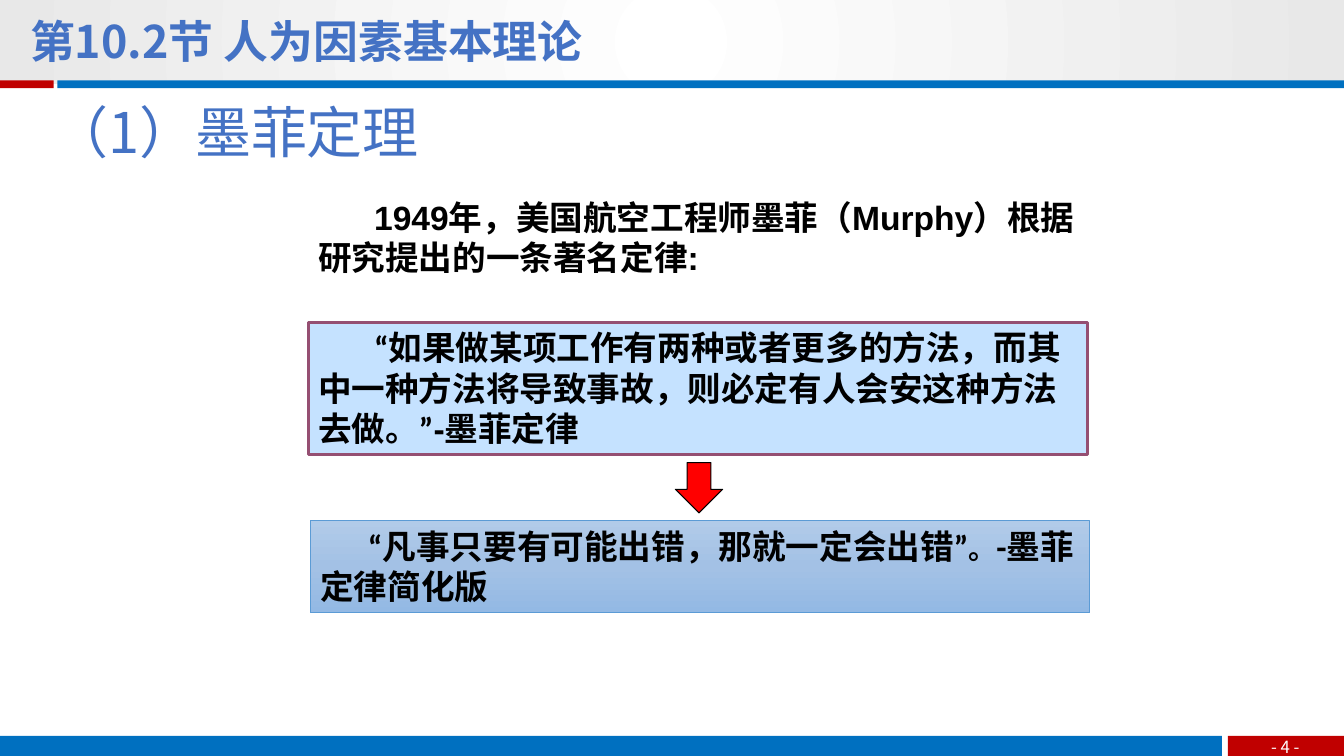
from dataclasses import dataclass

from lxml import etree
from pptx import Presentation
from pptx.dml.color import RGBColor
from pptx.enum.shapes import MSO_SHAPE
from pptx.enum.text import MSO_ANCHOR, PP_ALIGN
from pptx.oxml.ns import qn
from pptx.util import Pt

RECT, DOWN_ARROW = MSO_SHAPE.RECTANGLE, MSO_SHAPE.DOWN_ARROW
TOP, MIDDLE = MSO_ANCHOR.TOP, MSO_ANCHOR.MIDDLE
LEFT, CENTER = PP_ALIGN.LEFT, PP_ALIGN.CENTER
NOTO, BODY_EAST_ASIAN = "Noto Sans CJK SC", "Calibri"
BLUE, RED, TITLE_BLUE = "0070C0", "C00000", "4472C4"
BLACK, WHITE = "000000", "FFFFFF"

Box = tuple[float, float, float, float]
Stops = tuple[tuple[int, str], ...]


@dataclass(frozen=True)
class Panel:
    box: Box
    fill: str | Stops
    line: str = ""
    line_width: float = 0
    opacity: int = 100
    radial: bool = False
    kind: MSO_SHAPE = RECT


@dataclass(frozen=True)
class Text:
    box: Box
    runs: tuple[tuple[str, float], ...]
    font: str = NOTO
    east_asian: str = NOTO
    color: str = BLACK
    bold: bool = False
    align: PP_ALIGN = LEFT
    anchor: MSO_ANCHOR = TOP
    indent: float = 0
    line_spacing: float = 1
    margin_top: float = 3.6
    wrap: bool = True


def rgb(value: str) -> RGBColor:
    return RGBColor.from_string(value)


def add_gradient(shape, stops: Stops, radial: bool) -> None:
    """Fill from the centre outwards, or from top to bottom."""
    gradient = etree.Element(qn("a:gradFill"), rotWithShape="1")
    stop_list = etree.SubElement(gradient, qn("a:gsLst"))
    for percent, color in stops:
        stop = etree.SubElement(stop_list, qn("a:gs"), pos=str(percent * 1000))
        etree.SubElement(stop, qn("a:srgbClr"), val=color)
    if radial:
        circle = etree.SubElement(gradient, qn("a:path"), path="circle")
        center = dict.fromkeys("ltrb", "50000")
        etree.SubElement(circle, qn("a:fillToRect"), center)
    else:
        etree.SubElement(gradient, qn("a:lin"), ang="5400000", scaled="0")
    shape.element.spPr.find(qn("a:prstGeom")).addnext(gradient)


def add_panel(slide, panel: Panel) -> None:
    shape = slide.shapes.add_shape(panel.kind, *map(Pt, panel.box))
    shape.shadow.inherit = False
    if isinstance(panel.fill, str):
        shape.fill.solid()
        shape.fill.fore_color.rgb = rgb(panel.fill)
        if panel.opacity < 100:
            color = shape.element.spPr.find(qn("a:solidFill"))[0]
            etree.SubElement(color, qn("a:alpha"), val=str(panel.opacity * 1000))
    else:
        add_gradient(shape, panel.fill, panel.radial)
    if panel.line:
        shape.line.color.rgb = rgb(panel.line)
        shape.line.width = Pt(panel.line_width)
    else:
        shape.line.fill.background()


def add_text(slide, text: Text) -> None:
    frame = slide.shapes.add_textbox(*map(Pt, text.box)).text_frame
    frame.word_wrap = text.wrap
    frame.vertical_anchor = text.anchor
    frame.margin_top, frame.margin_bottom = Pt(text.margin_top), Pt(0)
    paragraph = frame.paragraphs[0]
    paragraph.alignment = text.align
    paragraph.line_spacing = text.line_spacing
    if text.indent:
        paragraph._p.get_or_add_pPr().set("indent", str(Pt(text.indent)))
    for words, size in text.runs:
        run = paragraph.add_run()
        run.text = words
        run.font.size = Pt(size)
        run.font.bold = text.bold
        run.font.name = text.font
        run.font.color.rgb = rgb(text.color)
        latin = run._r.rPr.find(qn("a:latin"))
        latin.addnext(etree.Element(qn("a:ea"), typeface=text.east_asian))


def statement(box: Box, indent: float, *runs: tuple[str, float],
              font: str = "Arial") -> Text:
    return Text(box, runs, font, BODY_EAST_ASIAN, bold=True, indent=indent)


# Header band, rules and footer
FRAME = (
    Panel((-1.4, 0, 961.4, 60), ((0, WHITE), (100, "E8E8E8")), radial=True),
    Panel((41, 57.4, 919, 5.6), BLUE),
    Panel((0, 57.4, 38.3, 5.6), RED),
    Panel((0, 525.6, 872.8, 14.4), BLUE),
    Panel((877, 525.6, 83, 14.4), RED),
)

# Murphy's law, leading down to its short form
LAW_BOX = (220.2, 230.2, 556.6, 94.4)
SHORT_BOX = (221.8, 372, 556.6, 65.6)
LAW_FLOW = (
    Panel(LAW_BOX, "99CCFF", "954F72", 2, opacity=57),
    Panel(SHORT_BOX, ((0, "B1CBE9"), (50, "A3C1E5"), (100, "93B9E4")),
          "5B9BD5", 0.5),
    Panel((482.4, 330.4, 33.8, 36), "FF0000", BLACK, 0.75, kind=DOWN_ARROW),
)

TEXTS = (
    Text((890, 522.7, 56.2, 21.6), (("- 4 -", 12),), color=WHITE,
         align=CENTER, anchor=MIDDLE, margin_top=0, wrap=False),
    Text((0, -7.9, 437.8, 65.5), (("第10.2节 人为因素基本理论", 32),),
         color=TITLE_BLUE, bold=True, align=CENTER, margin_top=18),
    Text((30.2, 71.3, 666, 45.4), (("（1）墨菲定理", 40),),
         color=TITLE_BLUE, line_spacing=0.9),
    statement((220.2, 136.8, 556.6, 65.5), 40,
              ("1949年，美国航空工程师墨菲（Murphy）根据研究提出的一条著名定律:", 24)),
    statement(LAW_BOX, 40,
              ("“如果做某项工作有两种或者更多的方法，而其中一种方法将导致事故，"
               "则必定有人会安这种方法去做。”-墨菲定律", 24)),
    statement(SHORT_BOX, 34,
              ("“凡事只要有可能出错，那就一定会出错”", 24), ("。", 20),
              ("-墨菲定律简化版", 24), font="Calibri"),
)


def main() -> None:
    presentation = Presentation()
    presentation.slide_width, presentation.slide_height = Pt(960), Pt(540)
    slide = presentation.slides.add_slide(presentation.slide_layouts[6])
    for panel in FRAME + LAW_FLOW:
        add_panel(slide, panel)
    for text in TEXTS:
        add_text(slide, text)
    presentation.save("out.pptx")


if __name__ == "__main__":
    main()
